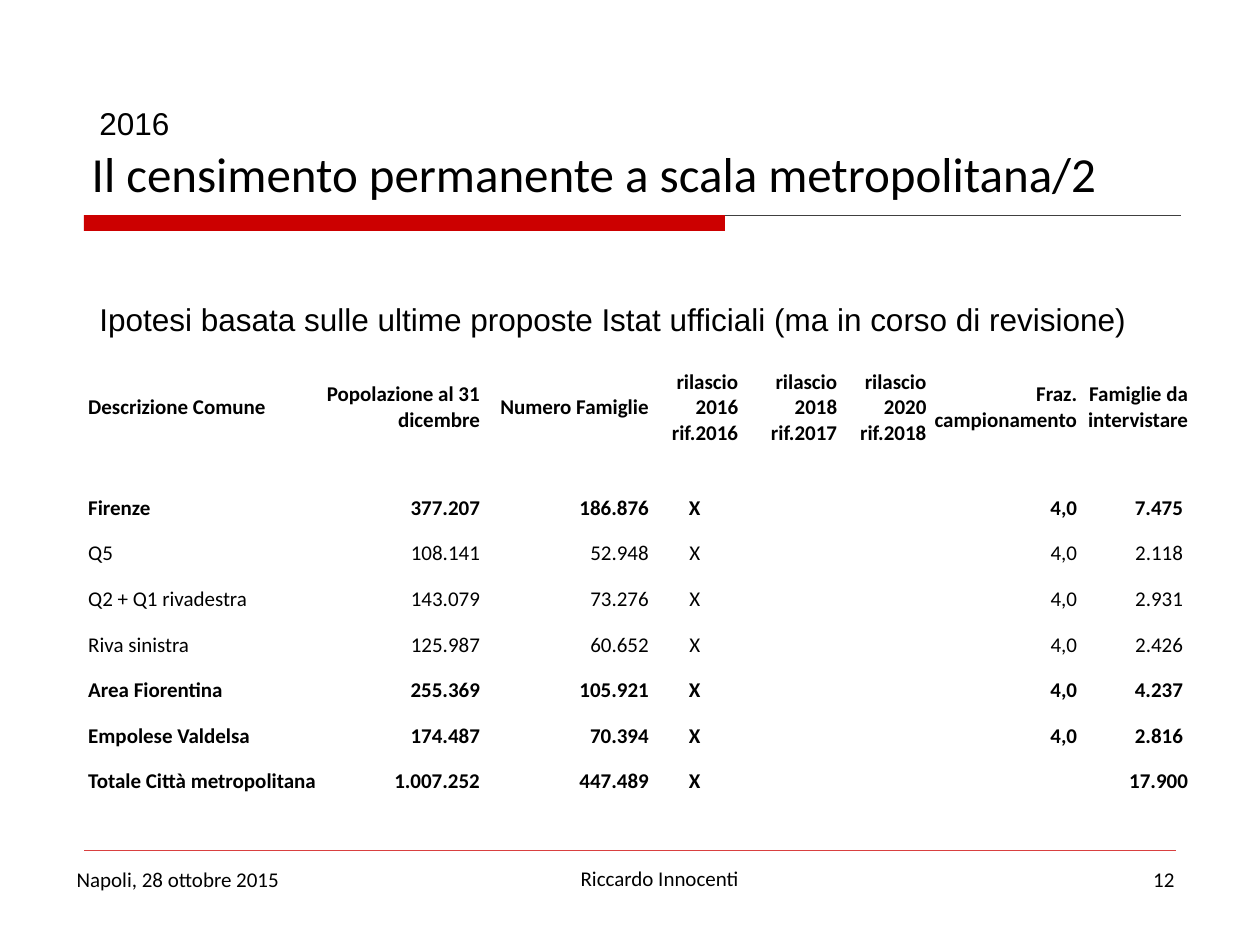
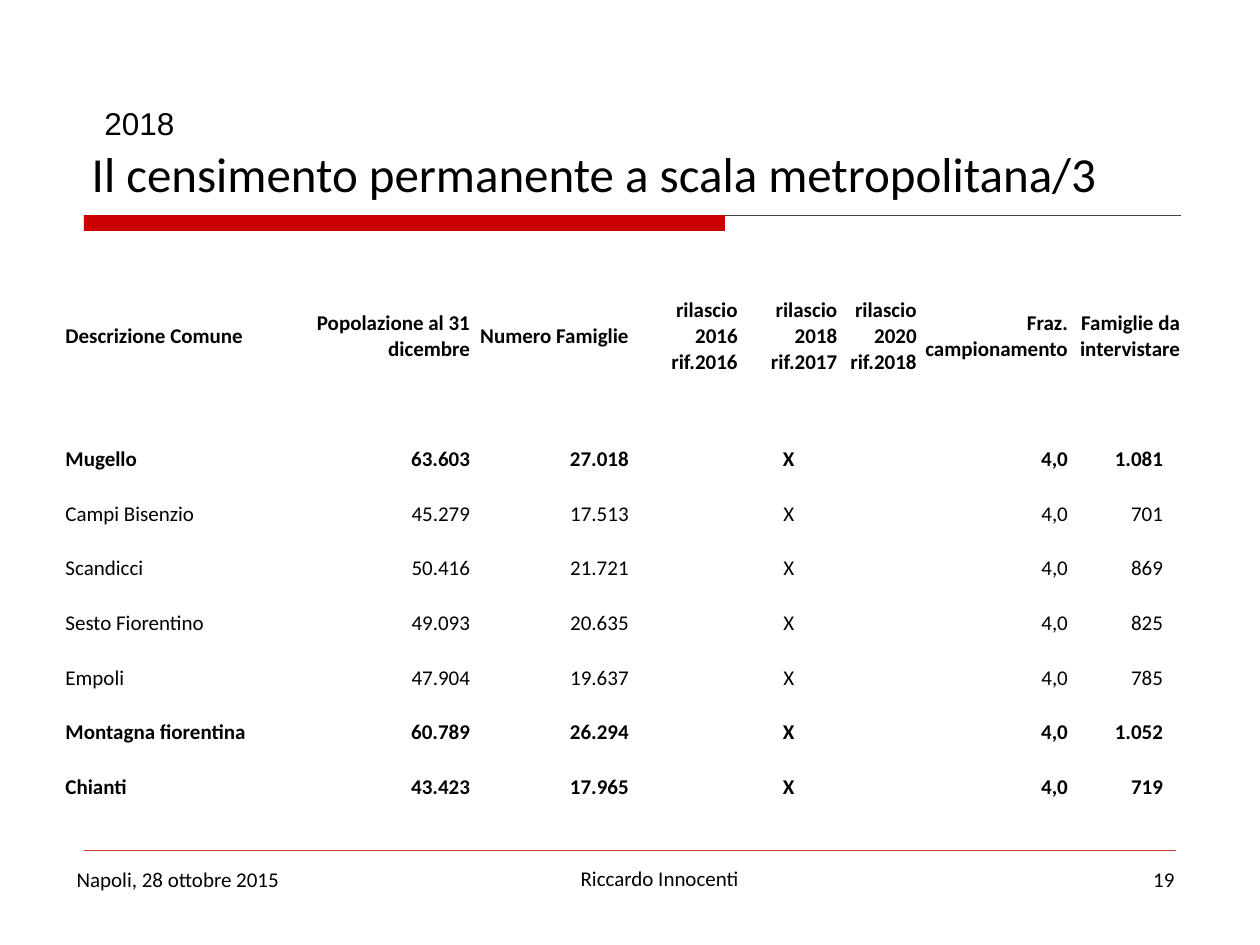
from dataclasses import dataclass

from lxml import etree
from pptx import Presentation
from pptx.dml.color import RGBColor
from pptx.enum import shapes, text
from pptx.oxml.ns import qn
from pptx.util import Pt


@dataclass(frozen=True)
class Theme:
    red: RGBColor = RGBColor(0xCC, 0x00, 0x00)
    pale_red: RGBColor = RGBColor(0xD9, 0x40, 0x40)
    gray: RGBColor = RGBColor(0x40, 0x40, 0x40)
    black: RGBColor = RGBColor(0x00, 0x00, 0x00)
    main_font: str = "Calibri"
    note_font: str = "Arial"
    title_size: int = 28
    note_size: int = 18
    small_size: int = 12
    cell_margin: float = 0.72


theme = Theme()
LEFT, CENTER, RIGHT = text.PP_ALIGN.LEFT, text.PP_ALIGN.CENTER, text.PP_ALIGN.RIGHT


def write(frame, words, size, font=theme.main_font, align=LEFT, bold=False):
    frame.text = words
    para = frame.paragraphs[0]
    para.alignment = align
    for span in para.runs:
        span.font.name = font
        span.font.size = Pt(size)
        span.font.bold = bold
        span.font.color.rgb = theme.black


def add_rule(page, left, right, top, color, width):
    rule = page.shapes.add_connector(
        shapes.MSO_CONNECTOR.STRAIGHT, Pt(left), Pt(top), Pt(right), Pt(top))
    rule.line.color.rgb = color
    rule.line.width = Pt(width)
    etree.SubElement(rule.element.spPr, qn("a:effectLst"))


# Content: each row is name, population, households, fraction, interviews, bold
header = ["Descrizione Comune", "Popolazione al 31 dicembre", "Numero Famiglie",
          "rilascio 2016 rif.2016", "rilascio 2018 rif.2017", "rilascio 2020 rif.2018",
          "Fraz. campionamento", "Famiglie da intervistare"]

censuses = [
    dict(
        title="Il censimento permanente a scala metropolitana/2", number="12",
        notes=[("2016", 49.7, 55.8, 54.7),
               ("Ipotesi basata sulle ultime proposte Istat ufficiali "
                "(ma in corso di revisione)", 49.7, 167.8, 607)],
        left=49.7, top=193.3, header_height=78.4, row_height=26.06,
        widths=[134.6, 90.7, 96.5, 51.1, 56.6, 51, 86.1, 63.4],
        release_column=3, interview_margin=3.6,
        rows=[("Firenze", "377.207", "186.876", "4,0", "7.475", True),
              ("Q5", "108.141", "52.948", "4,0", "2.118", False),
              ("Q2 + Q1 rivadestra", "143.079", "73.276", "4,0", "2.931", False),
              ("Riva sinistra", "125.987", "60.652", "4,0", "2.426", False),
              ("Area Fiorentina", "255.369", "105.921", "4,0", "4.237", True),
              ("Empolese Valdelsa", "174.487", "70.394", "4,0", "2.816", True),
              ("Totale Città metropolitana", "1.007.252", "447.489", "", "17.900", True)]),
    dict(
        title="Il censimento permanente a scala metropolitana/3", number="19",
        notes=[("2018", 52.6, 55.8, 54.7)],
        left=36.7, top=145, header_height=93.6, row_height=31.24,
        widths=[113.4, 119.2, 90.7, 62.3, 56.9, 45.4, 86.4, 64.1],
        release_column=4, interview_margin=10.5,
        rows=[("Mugello", "63.603", "27.018", "4,0", "1.081", True),
              ("Campi Bisenzio", "45.279", "17.513", "4,0", "701", False),
              ("Scandicci", "50.416", "21.721", "4,0", "869", False),
              ("Sesto Fiorentino", "49.093", "20.635", "4,0", "825", False),
              ("Empoli", "47.904", "19.637", "4,0", "785", False),
              ("Montagna fiorentina", "60.789", "26.294", "4,0", "1.052", True),
              ("Chianti", "43.423", "17.965", "4,0", "719", True)]),
]

deck = Presentation()
deck.slide_width, deck.slide_height = Pt(720), Pt(540)

for census in censuses:
    page = deck.slides.add_slide(deck.slide_layouts[5])

    # Title with red band and thin rule
    title = page.shapes.title
    title.left, title.top, title.width, title.height = Pt(45.2), Pt(20.6), Pt(630), Pt(98.6)
    write(title.text_frame, census["title"], theme.title_size)
    title.text_frame.vertical_anchor = text.MSO_ANCHOR.BOTTOM
    title.text_frame.auto_size = text.MSO_AUTO_SIZE.NONE
    add_rule(page, 48.2, 674.6, 123.1, theme.gray, 0.5)
    band = page.shapes.add_shape(
        shapes.MSO_SHAPE.RECTANGLE, Pt(48), Pt(122.9), Pt(366.3), Pt(9))
    band.shadow.inherit = False
    band.fill.solid()
    band.fill.fore_color.rgb = theme.red
    band.line.fill.background()

    # Table
    frame = page.shapes.add_table(
        len(census["rows"]) + 1, len(header), Pt(census["left"]), Pt(census["top"]),
        Pt(sum(census["widths"])),
        Pt(census["header_height"] + len(census["rows"]) * census["row_height"]))
    table = frame.table
    table.first_row = table.horz_banding = False
    for column, width in zip(table.columns, census["widths"]):
        column.width = Pt(width)

    grid = [(header, True)]
    for name, population, households, fraction, interviews, bold in census["rows"]:
        releases = ["X" if c == census["release_column"] else "" for c in (3, 4, 5)]
        grid.append(([name, population, households, *releases, fraction, interviews], bold))

    for r, (values, bold) in enumerate(grid):
        table.rows[r].height = Pt(census["row_height"] if r else census["header_height"])
        for c, value in enumerate(values):
            cell = table.cell(r, c)
            cell.fill.background()
            cell.margin_left = cell.margin_right = cell.margin_top = Pt(theme.cell_margin)
            cell.margin_bottom = 0
            cell.vertical_anchor = text.MSO_ANCHOR.BOTTOM if r else text.MSO_ANCHOR.MIDDLE
            align = LEFT if c == 0 else CENTER if value == "X" else RIGHT
            write(cell.text_frame, value, theme.small_size, align=align, bold=bold)
        # Interview counts stand in from the edge, except in the total row
        if r and values[6]:
            table.cell(r, 7).margin_right = Pt(census["interview_margin"])

    # Year and remark
    for words, left, top, width in census["notes"]:
        box = page.shapes.add_textbox(Pt(left), Pt(top), Pt(width), Pt(28.8))
        box.text_frame.word_wrap = False
        box.text_frame.auto_size = text.MSO_AUTO_SIZE.SHAPE_TO_FIT_TEXT
        write(box.text_frame, words, theme.note_size, theme.note_font)

    # Footer
    add_rule(page, 48.2, 671.8, 486, theme.pale_red, 0.25)
    for words, left, top, width, align in [
            ("Napoli, 28 ottobre 2015", 36.7, 491.8, 141.8, LEFT),
            ("Riccardo Innocenti", 190.1, 491, 373.7, CENTER),
            (census["number"], 569.5, 491.8, 108.7, RIGHT)]:
        box = page.shapes.add_textbox(Pt(left), Pt(top), Pt(width), Pt(37.4))
        box.text_frame.word_wrap = True
        write(box.text_frame, words, theme.small_size, align=align)

deck.save("out.pptx")
